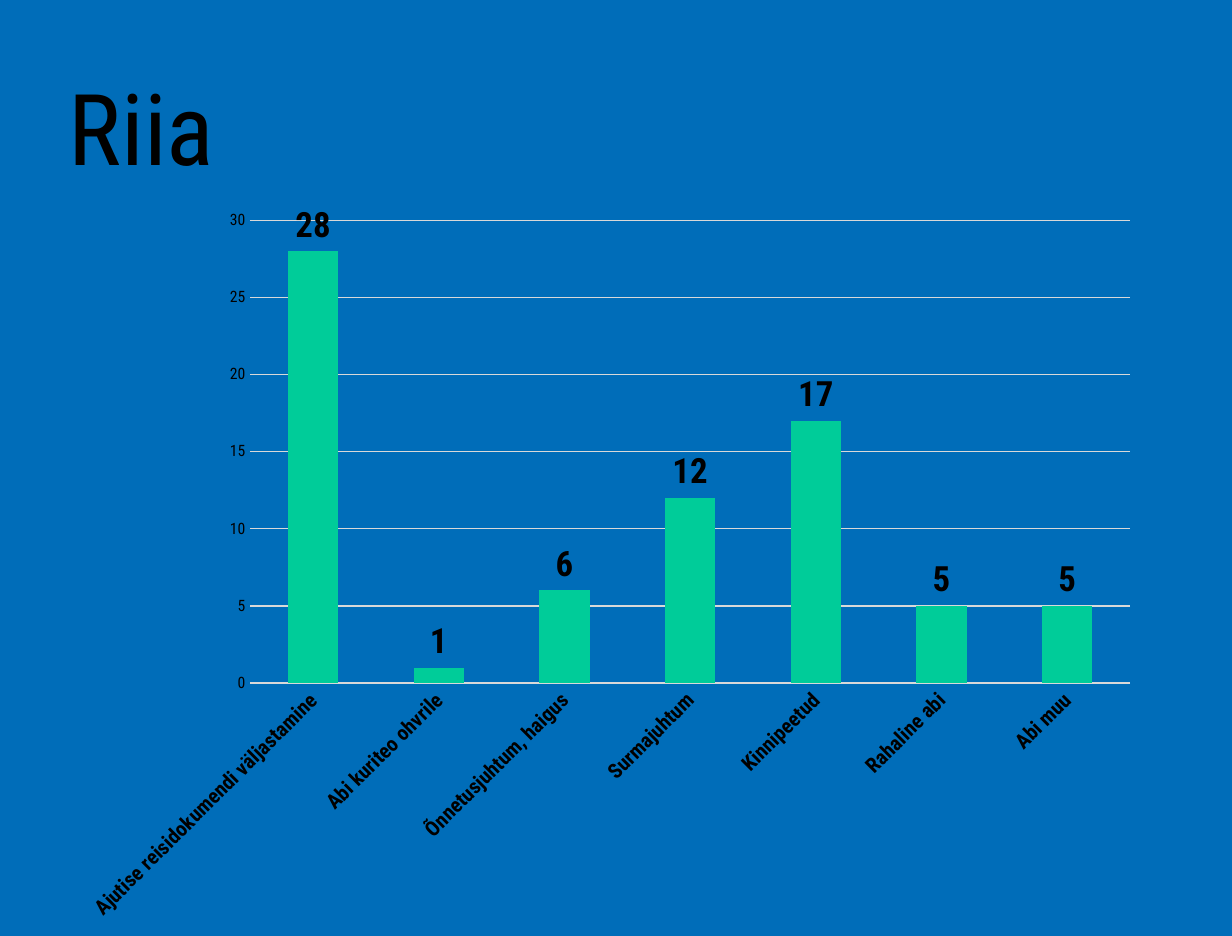
from pptx import Presentation
from pptx.chart.data import CategoryChartData
from pptx.dml.color import RGBColor
from pptx.enum.chart import XL_CHART_TYPE as ChartType
from pptx.enum.chart import XL_LABEL_POSITION as LabelPosition
from pptx.enum.chart import XL_TICK_MARK as TickMark
from pptx.enum.text import MSO_ANCHOR as Anchor
from pptx.enum.text import MSO_AUTO_SIZE as AutoSize
from pptx.enum.text import PP_ALIGN as Align
from pptx.oxml import parse_xml
from pptx.oxml.ns import nsdecls
from pptx.util import Inches, Pt

FONT = "Roboto Condensed"
BLUE, GREEN, BLACK, GRID = "006DB9", "00CC99", "000000", "D9D9D9"

# Left, top, width and height in inches
TITLE_BOX = (0.55, 0.43, 8.66, 1.28)
CHART_BOX = (0.55, 1.57, 8.66, 5.91)
PLOT_BOX = (2.0, 1.76, 7.03, 3.7)

CASES = {
    "Ajutise reisidokumendi väljastamine": 28,
    "Abi kuriteo ohvrile": 1,
    "Õnnetusjuhtum, haigus": 6,
    "Surmajuhtum": 12,
    "Kinnipeetud": 17,
    "Rahaline abi": 5,
    "Abi muu": 5,
}


def paint(fill, color):
    fill.solid()
    fill.fore_color.rgb = RGBColor.from_string(color)


def style_font(font, size, bold=False):
    font.name = FONT
    font.size = Pt(size)
    font.bold = bold
    paint(font.fill, BLACK)


def set_title(page, text):
    title = page.shapes.title
    title.left, title.top, title.width, title.height = map(Inches, TITLE_BOX)
    frame = title.text_frame
    frame.text = text
    frame.auto_size = AutoSize.NONE
    frame.vertical_anchor = Anchor.MIDDLE
    frame.margin_left = frame.margin_right = 0
    frame.margin_top = frame.margin_bottom = 0
    para = frame.paragraphs[0]
    para.alignment = Align.LEFT
    para.line_spacing = 0.88
    style_font(para.font, 57)


def style_axis(axis, size, bold=False):
    axis.major_tick_mark = axis.minor_tick_mark = TickMark.NONE
    axis.format.line.fill.background()
    style_font(axis.tick_labels.font, size, bold)


def place_plot(chart):
    """Fix the inner plot area, as fractions of the chart."""
    left, top, width, height = CHART_BOX
    x, y, w, h = PLOT_BOX
    shares = ((x - left) / width, (y - top) / height, w / width, h / height)
    sizes = "".join(f'<c:{tag} val="{share}"/>'
                    for tag, share in zip("xywh", shares))
    area = chart._chartSpace.chart.plotArea
    for layout in area.xpath("c:layout"):
        area.remove(layout)
    area.insert(0, parse_xml(
        f'<c:layout {nsdecls("c")}><c:manualLayout>'
        '<c:layoutTarget val="inner"/>'
        '<c:xMode val="edge"/><c:yMode val="edge"/>'
        f'{sizes}</c:manualLayout></c:layout>'))


def add_case_chart(page, cases):
    data = CategoryChartData()
    data.categories = list(cases)
    data.add_series("Series 1", list(cases.values()))
    chart = page.shapes.add_chart(
        ChartType.COLUMN_CLUSTERED, *map(Inches, CHART_BOX), data).chart
    chart.has_title = chart.has_legend = False
    style_font(chart.font, 10)
    place_plot(chart)

    # Columns and their values
    plot = chart.plots[0]
    plot.gap_width = 150
    plot.vary_by_categories = False
    series = plot.series[0]
    paint(series.format.fill, GREEN)
    labels = series.data_labels
    labels.show_value = True
    labels.position = LabelPosition.OUTSIDE_END
    style_font(labels.font, 20, bold=True)

    # Slanted category names
    style_axis(chart.category_axis, 12, bold=True)
    for body in chart._chartSpace.xpath(".//c:catAx/c:txPr/a:bodyPr"):
        body.set("rot", "-2700000")
        body.set("vert", "horz")

    # Value scale and gridlines
    scale = chart.value_axis
    style_axis(scale, 9)
    scale.minimum_scale, scale.maximum_scale, scale.major_unit = 0, 30, 5
    scale.has_major_gridlines = True
    grid = scale.major_gridlines.format.line
    grid.width = Pt(0.75)
    paint(grid.fill, GRID)


def main():
    deck = Presentation()
    # The page measures 25 by 19 cm
    deck.slide_width, deck.slide_height = Inches(25 / 2.54), Inches(19 / 2.54)
    page = deck.slides.add_slide(deck.slide_layouts[5])
    paint(page.background.fill, BLUE)
    set_title(page, "Riia")
    add_case_chart(page, CASES)
    deck.save("out.pptx")


if __name__ == "__main__":
    main()
